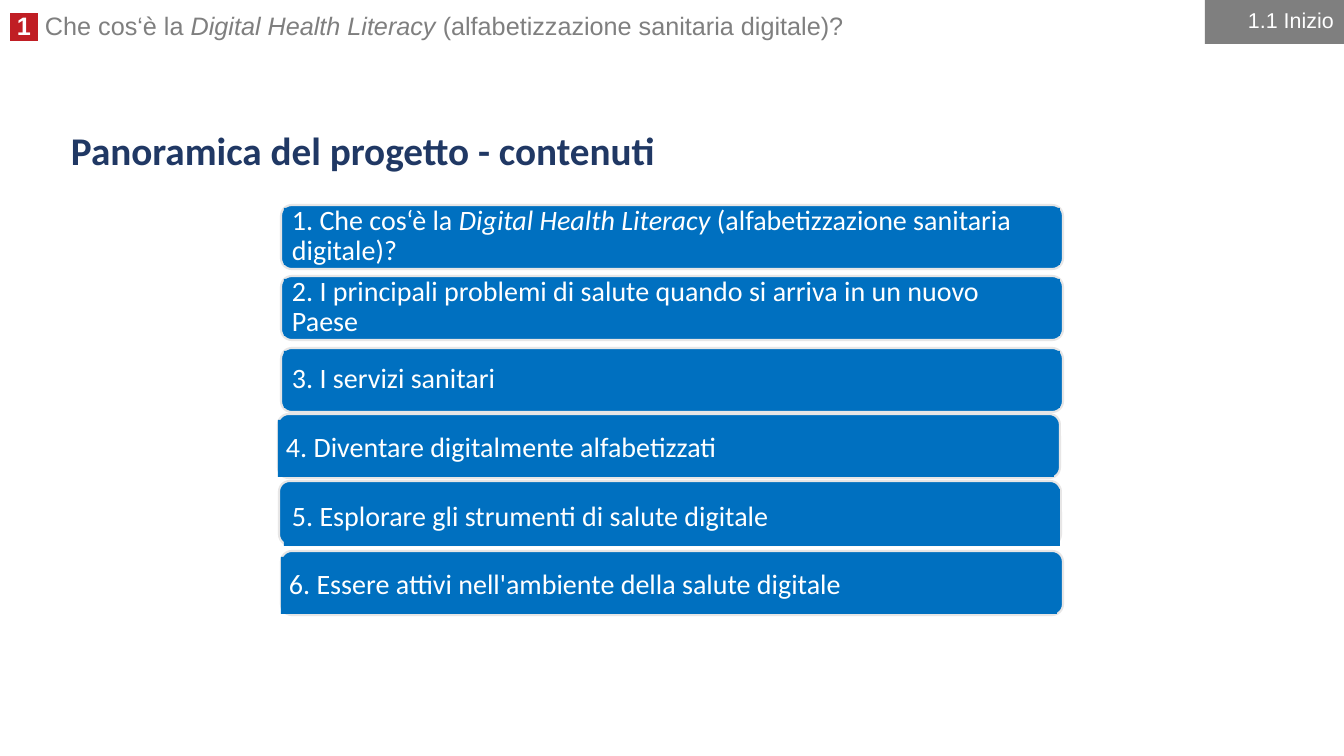
"""Builds the project overview slide with its six content bars."""
from lxml.etree import SubElement
from pptx import Presentation
from pptx.dml.color import RGBColor
from pptx.enum.shapes import MSO_SHAPE as Shape
from pptx.enum.text import MSO_ANCHOR as Anchor, MSO_AUTO_SIZE as AutoSize, PP_ALIGN as Align
from pptx.oxml.ns import qn
from pptx.util import Pt

PX = 914400 / 100.8
WHITE, GREY, BLUE = "FFFFFF", "7F7F7F", "0070C0"
BAR_LEFT = 281
BARS = [
    ("1. Che cos‘è la *Digital Health Literacy *(alfabetizzazione sanitaria digitale)?", 281, 205, 284, 208),
    ("2. I principali problemi di salute quando si arriva in un nuovo Paese", 281, 276, 284, 279),
    ("3. I servizi sanitari", 281, 348, 284, 351),
    ("4. Diventare digitalmente alfabetizzati", 278, 414, 278, 420),
    ("5. Esplorare gli strumenti di salute digitale", 279, 481, 284, 489),
    ("6. Essere attivi nell'ambiente della salute digitale", 281, 551, 281, 557),
]


def write(shape, text, font="Calibri", size=20, color=WHITE, bold=False, highlight=None,
          align=Align.LEFT, spacing=0.9, anchor=Anchor.MIDDLE, inset=(10, 5)):
    """Append text to the shape's paragraph; parts between asterisks are italic."""
    frame = shape.text_frame
    frame.word_wrap = True
    frame.vertical_anchor = anchor
    frame.margin_left = frame.margin_right = round(inset[0] * PX)
    frame.margin_top = frame.margin_bottom = round(inset[1] * PX)
    paragraph = frame.paragraphs[0]
    paragraph.alignment = align
    paragraph.line_spacing = spacing
    for index, part in enumerate(text.split("*")):
        run = paragraph.add_run()
        run.text = part
        run.font.size = Pt(size)
        run.font.bold = bold
        run.font.italic = index % 2 == 1
        run.font.color.rgb = RGBColor.from_string(color)
        if highlight:
            mark = SubElement(run.font._element, qn("a:highlight"))
            SubElement(mark, qn("a:srgbClr"), val=highlight)
        run.font.name = font


def add_box(kind, left, top, width, height, fill, line=None):
    """Add a filled preset shape with an optional outline."""
    box = slide.shapes.add_shape(kind, *[round(length * PX) for length in (left, top, width, height)])
    box.shadow.inherit = False
    box.fill.solid()
    box.fill.fore_color.rgb = RGBColor.from_string(fill)
    if line:
        box.line.color.rgb = RGBColor.from_string(line)
        box.line.width = Pt(1.5)
    else:
        box.line.fill.background()
    return box


presentation = Presentation()
presentation.slide_width = round(1344 * PX)
presentation.slide_height = round(756 * PX)
slide = presentation.slides.add_slide(presentation.slide_layouts[5])

title = slide.shapes.title
title.left, title.top, title.width, title.height = [round(length * PX) for length in (61, 119, 1220, 67)]
title.text_frame.auto_size = AutoSize.NONE
write(title, "Panoramica del progetto - contenuti", size=28, color="203864", bold=True)

header = slide.shapes.add_textbox(*[round(length * PX) for length in (0, 11, 960, 35)])
header.text_frame.auto_size = AutoSize.SHAPE_TO_FIT_TEXT
header_format = dict(font="Arial", size=18, spacing=0.8, anchor=Anchor.TOP)
write(header, " 1 ", bold=True, highlight="C01E24", **header_format)
write(header, " Che cos‘è la *Digital Health Literacy *(alfabetizzazione sanitaria digitale)?",
      color=GREY, **header_format)

for text, frame_left, frame_top, label_left, label_top in BARS:
    bar = add_box(Shape.ROUNDED_RECTANGLE, frame_left, frame_top, 782, 64, BLUE, line="E7E6E6")
    bar.adjustments[0] = 0.167
    label = add_box(Shape.RECTANGLE, label_left, label_top, 776, 57, BLUE)
    write(label, text, inset=(8, 8))

section = add_box(Shape.RECTANGLE, 1205, 0, 139, 44, GREY)
write(section, "1.1 Inizio", font="Arial", size=15.3, align=Align.RIGHT, spacing=0.8)

presentation.save("out.pptx")
